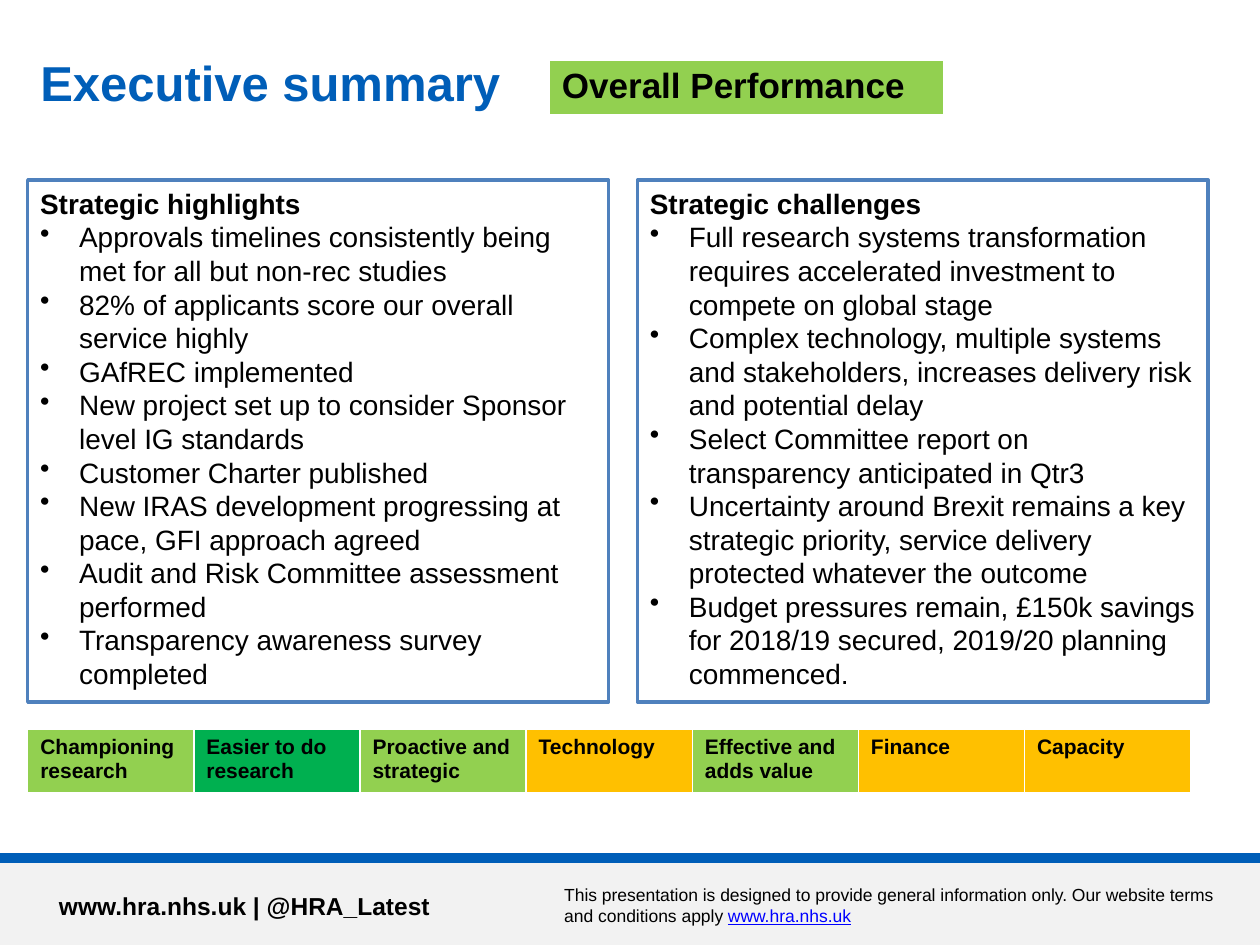
"""Build the executive summary slide with its performance ratings."""

from dataclasses import dataclass
from typing import Any

import pptx
import pptx.dml.color
import pptx.enum.shapes
import pptx.enum.text
import pptx.oxml
import pptx.oxml.ns
import pptx.util


@dataclass(frozen=True)
class Theme:
    font: str = "Arial"
    blue: str = "005EB8"
    outline: str = "4F81BD"
    footer: str = "F2F2F2"
    text: str = "000000"
    link: str = "0000FF"
    light_green: str = "92D050"
    green: str = "00B050"
    amber: str = "FFC000"
    title_size: int = 28
    overall_size: int = 20
    body_size: int = 16
    contact_size: int = 14
    rating_size: int = 12
    notice_size: int = 10


@dataclass(frozen=True)
class Area:
    """A rectangle in percent of the slide's width and height."""

    left: float
    top: float
    width: float
    height: float

    def lengths(self) -> tuple[int, int, int, int]:
        return (
            int(SLIDE_WIDTH * self.left / 100),
            int(SLIDE_HEIGHT * self.top / 100),
            int(SLIDE_WIDTH * self.width / 100),
            int(SLIDE_HEIGHT * self.height / 100),
        )


@dataclass(frozen=True)
class Panel:
    area: Area
    heading: str
    points: tuple[str, ...]


@dataclass(frozen=True)
class Rating:
    label: str
    color: str


THEME = Theme()
SLIDE_WIDTH = pptx.util.Inches(10)
SLIDE_HEIGHT = pptx.util.Inches(7.5)
BULLET_INDENT = pptx.util.Inches(0.31)

TITLE_AREA = Area(2.2, 4.67, 39.8, 7.07)
OVERALL_AREA = Area(43.6, 6.4, 31.3, 5.47)
RATINGS_AREA = Area(2.2, 77.2, 92.3, 5.87)
FOOTER_AREA = Area(0, 90.8, 100, 9.2)
CONTACT_AREA = Area(3.7, 93.6, 38, 5.33)
NOTICE_AREA = Area(43.8, 92.93, 54, 7.07)

PANELS = (
    Panel(
        Area(2.2, 19.07, 46.1, 55.2),
        "Strategic highlights",
        (
            "Approvals timelines consistently being met for all but non-rec studies",
            "82% of applicants score our overall service highly",
            "GAfREC implemented",
            "New project set up to consider Sponsor level IG standards",
            "Customer Charter published",
            "New IRAS development progressing at pace, GFI approach agreed",
            "Audit and Risk Committee assessment performed",
            "Transparency awareness survey completed",
        ),
    ),
    Panel(
        Area(50.6, 19.07, 45.3, 55.2),
        "Strategic challenges",
        (
            "Full research systems transformation requires accelerated investment to compete on global stage",
            "Complex technology, multiple systems and stakeholders, increases delivery risk and potential delay",
            "Select Committee report on transparency anticipated in Qtr3",
            "Uncertainty around Brexit remains a key strategic priority, service delivery protected whatever the outcome",
            "Budget pressures remain, £150k savings for 2018/19 secured, 2019/20 planning commenced.",
        ),
    ),
)

OVERALL = (Rating("Overall Performance", THEME.light_green),)
RATINGS = (
    Rating("Championing research", THEME.light_green),
    Rating("Easier to do research", THEME.green),
    Rating("Proactive and strategic", THEME.light_green),
    Rating("Technology", THEME.amber),
    Rating("Effective and adds value", THEME.light_green),
    Rating("Finance", THEME.amber),
    Rating("Capacity", THEME.amber),
)


def rgb(color: str) -> pptx.dml.color.RGBColor:
    return pptx.dml.color.RGBColor.from_string(color)


def write(paragraph: Any, text: str, *, size: int, bold: bool = False,
          color: str = THEME.text, underline: bool = False) -> None:
    paragraph.alignment = pptx.enum.text.PP_ALIGN.LEFT
    run = paragraph.add_run()
    run.text = text
    run.font.name = THEME.font
    run.font.size = pptx.util.Pt(size)
    run.font.bold = bold
    run.font.underline = underline
    run.font.color.rgb = rgb(color)


def add_bullet(paragraph: Any) -> None:
    properties = paragraph._p.get_or_add_pPr()
    properties.set("marL", str(BULLET_INDENT))
    properties.set("indent", str(-BULLET_INDENT))
    bullet = pptx.oxml.parse_xml(f'<a:buChar {pptx.oxml.ns.nsdecls("a")} char="•"/>')
    properties.append(bullet)


def add_rectangle(slide: Any, area: Area) -> Any:
    shape = slide.shapes.add_shape(pptx.enum.shapes.MSO_SHAPE.RECTANGLE, *area.lengths())
    shape.shadow.inherit = False
    return shape


def add_text_box(slide: Any, area: Area) -> Any:
    frame = slide.shapes.add_textbox(*area.lengths()).text_frame
    frame.word_wrap = True
    return frame.paragraphs[0]


def add_title(slide: Any, text: str) -> None:
    title = slide.shapes.title
    title.left, title.top, title.width, title.height = TITLE_AREA.lengths()
    frame = title.text_frame
    frame.auto_size = pptx.enum.text.MSO_AUTO_SIZE.NONE
    frame.vertical_anchor = pptx.enum.text.MSO_ANCHOR.BOTTOM
    frame.margin_bottom = 0
    write(frame.paragraphs[0], text, size=THEME.title_size, bold=True, color=THEME.blue)


def add_panel(slide: Any, panel: Panel) -> None:
    shape = add_rectangle(slide, panel.area)
    shape.fill.background()
    shape.line.color.rgb = rgb(THEME.outline)
    shape.line.width = pptx.util.Pt(2)
    frame = shape.text_frame
    frame.word_wrap = True
    frame.vertical_anchor = pptx.enum.text.MSO_ANCHOR.TOP
    write(frame.paragraphs[0], panel.heading, size=THEME.body_size, bold=True)
    for point in panel.points:
        paragraph = frame.add_paragraph()
        add_bullet(paragraph)
        write(paragraph, point, size=THEME.body_size)


def add_ratings(slide: Any, area: Area, ratings: tuple[Rating, ...], size: int) -> None:
    table = slide.shapes.add_table(1, len(ratings), *area.lengths()).table
    for cell, rating in zip(table.rows[0].cells, ratings):
        cell.fill.solid()
        cell.fill.fore_color.rgb = rgb(rating.color)
        write(cell.text_frame.paragraphs[0], rating.label, size=size, bold=True)


def add_footer(slide: Any) -> None:
    band = add_rectangle(slide, FOOTER_AREA)
    band.fill.solid()
    band.fill.fore_color.rgb = rgb(THEME.footer)
    band.line.fill.background()
    rule = slide.shapes.add_connector(
        pptx.enum.shapes.MSO_CONNECTOR.STRAIGHT, 0, band.top, SLIDE_WIDTH, band.top)
    rule.line.color.rgb = rgb(THEME.blue)
    rule.line.width = pptx.util.Pt(6)
    rule._element.spPr.append(pptx.oxml.parse_xml(f'<a:effectLst {pptx.oxml.ns.nsdecls("a")}/>'))
    write(add_text_box(slide, CONTACT_AREA), "www.hra.nhs.uk | @HRA_Latest",
          size=THEME.contact_size, bold=True)
    notice = add_text_box(slide, NOTICE_AREA)
    write(notice, "This presentation is designed to provide general information only. "
          "Our website terms and conditions apply ", size=THEME.notice_size)
    write(notice, "www.hra.nhs.uk", size=THEME.notice_size, color=THEME.link, underline=True)


def main() -> None:
    presentation = pptx.Presentation()
    presentation.slide_width, presentation.slide_height = SLIDE_WIDTH, SLIDE_HEIGHT
    slide = presentation.slides.add_slide(presentation.slide_layouts.get_by_name("Title Only"))
    add_footer(slide)
    add_title(slide, "Executive summary")
    add_ratings(slide, RATINGS_AREA, RATINGS, THEME.rating_size)
    for panel in PANELS:
        add_panel(slide, panel)
    add_ratings(slide, OVERALL_AREA, OVERALL, THEME.overall_size)
    presentation.save("out.pptx")


if __name__ == "__main__":
    main()
